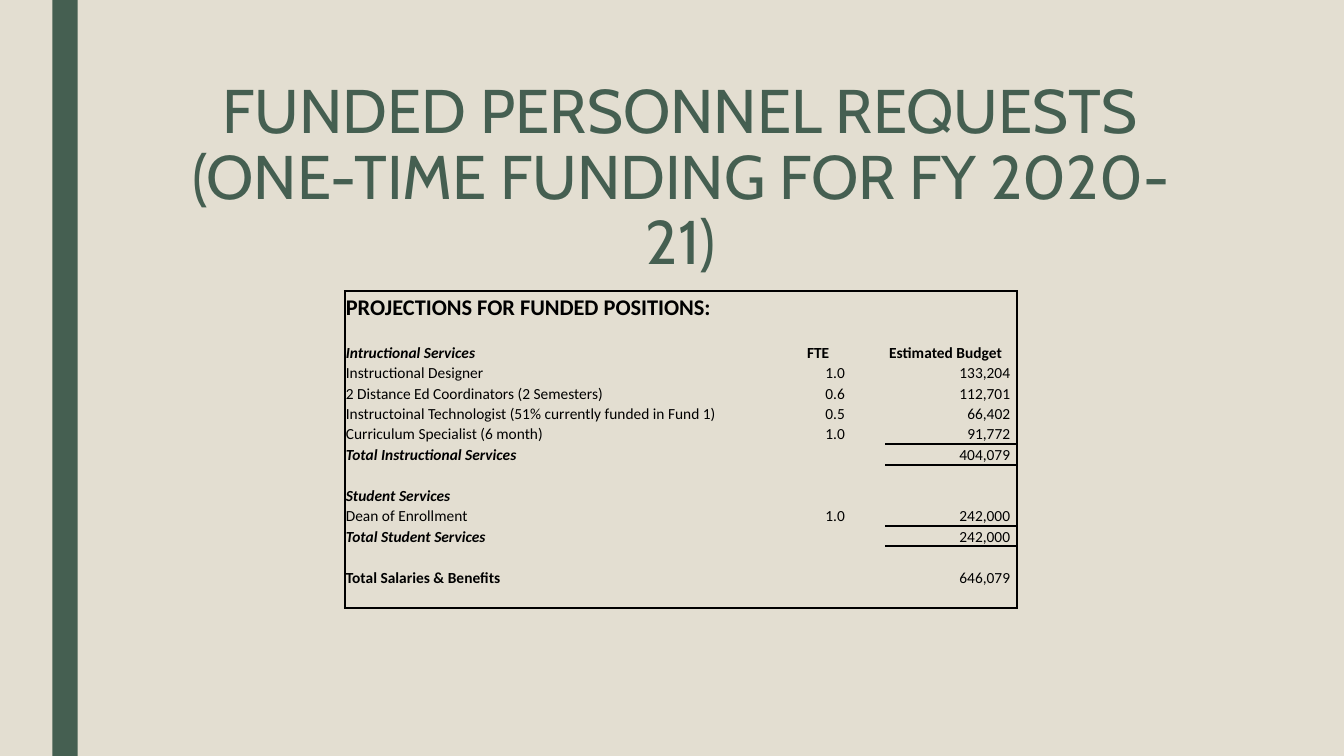
from lxml import etree
from pptx import Presentation
from pptx.dml.color import RGBColor
from pptx.enum.shapes import MSO_SHAPE
from pptx.enum.text import MSO_ANCHOR, MSO_AUTO_SIZE, PP_ALIGN
from pptx.oxml.ns import qn
from pptx.util import Inches, Pt

RECTANGLE = MSO_SHAPE.RECTANGLE
TOP, BOTTOM = MSO_ANCHOR.TOP, MSO_ANCHOR.BOTTOM
LEFT, CENTER, RIGHT = PP_ALIGN.LEFT, PP_ALIGN.CENTER, PP_ALIGN.RIGHT
NO_AUTOFIT = MSO_AUTO_SIZE.NONE
SAND = RGBColor(0xE3, 0xDE, 0xD1)
GREEN = RGBColor(0x45, 0x5F, 0x51)
BLACK = RGBColor(0, 0, 0)
NO_GRID_STYLE = "{2D5ABB26-0587-4C30-8999-92F81FD0307C}"

PLAIN, BOLD, ITALIC = (False, False), (True, False), (True, True)
HEADING, HEADER, ITEM, TOTAL = "heading", "header", "item", "total"
BLANK = (ITEM, PLAIN, "", "", "")
budget_rows = [
    (HEADING, BOLD, "PROJECTIONS FOR FUNDED POSITIONS:", "", ""),
    BLANK,
    (HEADER, ITALIC, "Intructional Services", "FTE", "Estimated Budget"),
    (ITEM, PLAIN, "Instructional Designer", "1.0", "133,204"),
    (ITEM, PLAIN, "2 Distance Ed Coordinators (2 Semesters)", "0.6", "112,701"),
    (ITEM, PLAIN, "Instructoinal Technologist (51% currently funded in Fund 1)", "0.5", "66,402"),
    (ITEM, PLAIN, "Curriculum Specialist (6 month)", "1.0", "91,772"),
    (TOTAL, ITALIC, "Total Instructional Services", "", "404,079"),
    BLANK,
    (ITEM, ITALIC, "Student Services", "", ""),
    (ITEM, PLAIN, "Dean of Enrollment", "1.0", "242,000"),
    (TOTAL, ITALIC, "Total Student Services", "", "242,000"),
    BLANK,
    (ITEM, BOLD, "Total Salaries & Benefits", "", "646,079"),
    BLANK,
]
column_widths = [4.36, 0.67, 0.33, 1.31]
heading_height, table_height = 0.3, 3.14
row_height = (table_height - heading_height) / (len(budget_rows) - 1)


def add_border(cell, side):
    line = etree.SubElement(cell._tc.get_or_add_tcPr(), qn(f"a:ln{side}"), w=str(Pt(1.5)))
    fill = etree.SubElement(line, qn("a:solidFill"))
    etree.SubElement(fill, qn("a:srgbClr"), val=str(BLACK))


prs = Presentation()
prs.slide_width, prs.slide_height = Inches(13.33), Inches(7.5)
slide = prs.slides.add_slide(prs.slide_layouts[5])
slide.background.fill.solid()
slide.background.fill.fore_color.rgb = SAND

stripe = slide.shapes.add_shape(RECTANGLE, Inches(0.52), 0, Inches(0.25), prs.slide_height)
stripe.shadow.inherit = False
stripe.fill.solid()
stripe.fill.fore_color.rgb = GREEN
stripe.line.fill.background()

title = slide.shapes.title
title.left, title.top, title.width, title.height = map(Inches, (1.5, 0.75, 10.5, 1.62))
title_frame = title.text_frame
title_frame.text = "FUNDED PERSONNEL REQUESTS\v(ONE-TIME FUNDING FOR FY 2020-21)"
title_frame.auto_size = NO_AUTOFIT
title_frame.word_wrap = True
title_frame.vertical_anchor = TOP
title_line = title_frame.paragraphs[0]
title_line.alignment = CENTER
title_line.line_spacing = 0.89
for run in title_line.runs:
    run.font.name = "Cabin"
    run.font.size = Pt(44)
    run.font.color.rgb = GREEN

budget = slide.shapes.add_table(
    len(budget_rows), len(column_widths), Inches(3.42), Inches(2.89),
    Inches(sum(column_widths)), Inches(table_height)).table
budget.first_row = budget.horz_banding = False
budget._tbl.tblPr.find(qn("a:tableStyleId")).text = NO_GRID_STYLE
for column, width in zip(budget.columns, column_widths):
    column.width = Inches(width)

last_row, last_column = len(budget_rows) - 1, len(column_widths) - 1
for r, (kind, label_style, label, fte, amount) in enumerate(budget_rows):
    budget.rows[r].height = Inches(heading_height if kind == HEADING else row_height)
    above_total = r < last_row and budget_rows[r + 1][0] == TOTAL
    for c, text in enumerate((label, fte, "", amount)):
        cell = budget.cell(r, c)
        is_number = c > 0 and kind != HEADER
        cell.vertical_anchor = BOTTOM
        cell.margin_left = Inches(0.04 if c == last_column else 0.01)
        cell.margin_right = Inches(0.07 if is_number else 0.01)
        cell.margin_top, cell.margin_bottom = Inches(0.01), 0
        edges = {
            "L": c == 0,
            "R": c == last_column,
            "T": r == 0 or (c == last_column and kind == TOTAL),
            "B": r == last_row or (c == last_column and above_total),
        }
        for side, visible in edges.items():
            if visible:
                add_border(cell, side)
        cell.fill.background()

        entry = cell.text_frame.paragraphs[0]
        entry.alignment = RIGHT if is_number else CENTER if c == 1 else LEFT
        size = 16 if kind == HEADING else 11
        if not text:
            etree.SubElement(entry._p, qn("a:endParaRPr"), sz=str(size * 100))
            continue
        run = entry.add_run()
        run.text = text
        bold, italic = label_style if c == 0 else (kind == HEADER, False)
        formats = {"name": "Calibri", "size": Pt(size), "bold": bold, "italic": italic}
        for attribute, value in formats.items():
            setattr(run.font, attribute, value)
        run.font.color.rgb = BLACK

prs.save("out.pptx")
